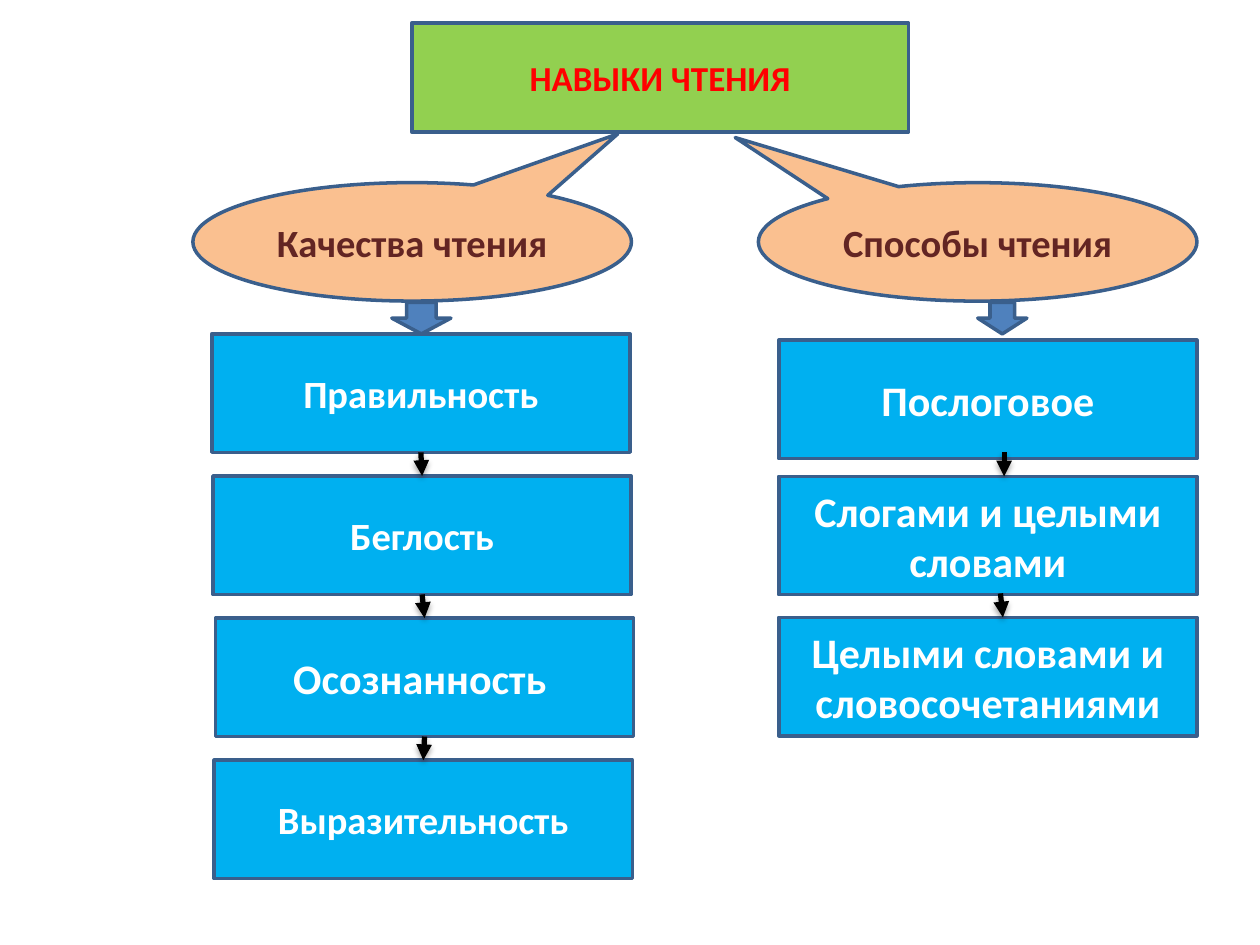
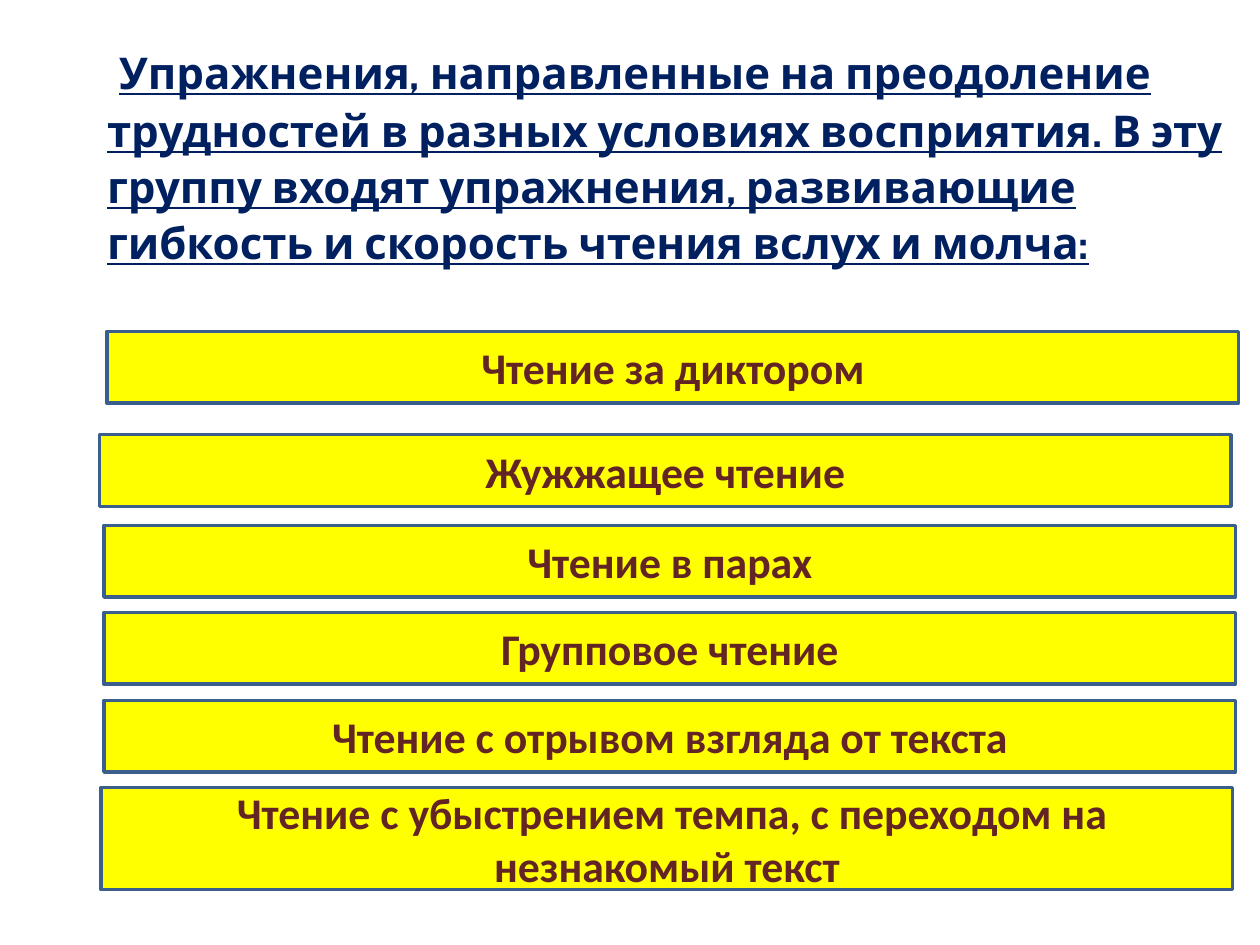
from lxml.etree import SubElement
from pptx import Presentation
from pptx.dml.color import RGBColor
from pptx.enum.shapes import MSO_CONNECTOR, MSO_SHAPE
from pptx.enum.text import MSO_ANCHOR, MSO_AUTO_SIZE, PP_ALIGN
from pptx.oxml.ns import qn
from pptx.util import Pt

WHITE = RGBColor(0xFF, 0xFF, 0xFF)
BLACK = RGBColor(0x00, 0x00, 0x00)
RED = RGBColor(0xFF, 0x00, 0x00)
GREEN = RGBColor(0x92, 0xD0, 0x50)
PEACH = RGBColor(0xFA, 0xC0, 0x90)
MAROON = RGBColor(0x63, 0x25, 0x23)
SKY = RGBColor(0x00, 0xB0, 0xF0)
BLUE = RGBColor(0x4F, 0x81, 0xBD)
OUTLINE = RGBColor(0x3A, 0x5F, 0x8C)
NAVY = RGBColor(0x00, 0x20, 0x60)
YELLOW = RGBColor(0xFF, 0xFF, 0x00)
BODY_FONT = "Calibri"
HEADING_FONT = "Cabin"


def style_shape(shape, fill, text="", size=20, color=WHITE):
    shape.fill.solid()
    shape.fill.fore_color.rgb = fill
    shape.line.color.rgb = OUTLINE
    shape.line.width = Pt(2)
    if text:
        frame = shape.text_frame
        frame.text = text
        frame.word_wrap = True
        frame.vertical_anchor = MSO_ANCHOR.MIDDLE
        para = frame.paragraphs[0]
        para.alignment = PP_ALIGN.CENTER
        font = para.runs[0].font
        font.name, font.size, font.bold = BODY_FONT, Pt(size), True
        font.color.rgb = color


def add_box(page, kind, place, fill, text="", size=20, color=WHITE):
    box = page.shapes.add_shape(kind, *[Pt(value) for value in place])
    box.shadow.inherit = False
    style_shape(box, fill, text, size, color)
    return box


deck = Presentation()
deck.slide_width, deck.slide_height = Pt(720), Pt(540)
title_only = deck.slide_layouts[5]

page = deck.slides.add_slide(title_only)
title = page.shapes.title
title.left, title.top, title.width, title.height = Pt(235.4), Pt(13), Pt(283.7), Pt(62.6)
ellipse = SubElement(title.element.spPr, qn("a:prstGeom"), prst="ellipse")
SubElement(ellipse, qn("a:avLst"))
style_shape(title, GREEN, "НАВЫКИ ЧТЕНИЯ", 20, RED)
title.text_frame.auto_size = MSO_AUTO_SIZE.NONE

for text, left, tip in [
    ("Способы чтения", 433.4, (-0.553, -0.881)),
    ("Качества чтения", 110.2, (0.469, -0.912)),
]:
    callout = add_box(page, MSO_SHAPE.OVAL_CALLOUT, (left, 104.4, 250.6, 67.7),
                      PEACH, text, 22, MAROON)
    callout.adjustments[0], callout.adjustments[1] = tip

for text, top in [
    ("Послоговое", 194.4),
    ("Слогами и целыми словами", 272.2),
    ("Целыми словами и словосочетаниями", 352.8),
]:
    add_box(page, MSO_SHAPE.RECTANGLE, (445, top, 239, 67.7), SKY, text, 24)

qualities = []
for row, (text, left, size) in enumerate([
    ("Правильность", 121, 22),
    ("Беглость", 121.7, 22),
    ("Осознанность ", 123.1, 24),
    ("Выразительность", 122.4, 22),
]):
    place = (left, 190.8 + 81.2 * row, 239, 67.7)
    qualities.append(add_box(page, MSO_SHAPE.RECTANGLE, place, SKY, text, size))

for left, width in [(223.9, 33.8), (558.7, 28.1)]:
    add_box(page, MSO_SHAPE.DOWN_ARROW, (left, 172.8, width, 18), BLUE)

arrows = []
for upper, lower in zip(qualities, qualities[1:]):
    arrow = page.shapes.add_connector(MSO_CONNECTOR.STRAIGHT, 0, 0, 0, 0)
    arrow.begin_connect(upper, 2)
    arrow.end_connect(lower, 0)
    arrows.append(arrow)
for ends in [(573.8, 258.5, 573.8, 272.2), (571.7, 339.1, 573.1, 352.8)]:
    arrows.append(page.shapes.add_connector(
        MSO_CONNECTOR.STRAIGHT, *[Pt(value) for value in ends]))

for arrow in arrows:
    arrow.line.color.rgb = BLACK
    arrow.line.width = Pt(3)
    properties = arrow._element.spPr
    SubElement(properties.find(qn("a:ln")), qn("a:tailEnd"), type="triangle")
    effects = SubElement(properties, qn("a:effectLst"))
    shadow = SubElement(effects, qn("a:outerShdw"), blurRad="40000", dist="23000",
                        dir="5400000", rotWithShape="0")
    tint = SubElement(shadow, qn("a:srgbClr"), val=str(BLACK))
    SubElement(tint, qn("a:alpha"), val="35000")

page = deck.slides.add_slide(title_only)
title = page.shapes.title
title.left, title.top, title.width, title.height = Pt(54), Pt(15.1), Pt(652.3), Pt(143.3)
frame = title.text_frame
frame.word_wrap = True
frame.auto_size = MSO_AUTO_SIZE.SHAPE_TO_FIT_TEXT
frame.vertical_anchor = MSO_ANCHOR.TOP
frame.text = " "
para = frame.paragraphs[0]
para.alignment = PP_ALIGN.LEFT
para.line_spacing = 1.07
para.space_after = Pt(8)
para.add_run().text = (
    "Упражнения, направленные на преодоление трудностей в разных условиях восприятия. "
    "В эту группу входят упражнения, развивающие гибкость и скорость чтения вслух и молча:"
)
for span, size, color, strong in zip(para.runs, (30, 25), (BLACK, NAVY), (False, True)):
    font = span.font
    font.name, font.size = HEADING_FONT, Pt(size)
    font.bold = font.underline = strong
    font.color.rgb = color

for text, left, top, height in [
    ("Чтение за диктором", 61.2, 189.4, 41),
    ("Жужжащее чтение", 56.9, 248.4, 41),
    ("Чтение в парах", 59.4, 300.2, 41),
    ("Групповое чтение", 59.4, 350, 41),
    ("Чтение с отрывом взгляда от текста", 59.4, 400.2, 41),
    (" Чтение с убыстрением темпа, с переходом на незнакомый текст", 57.8, 450, 58.3),
]:
    add_box(page, MSO_SHAPE.RECTANGLE, (left, top, 646.6, height), YELLOW, text, 25, MAROON)

deck.save("out.pptx")
